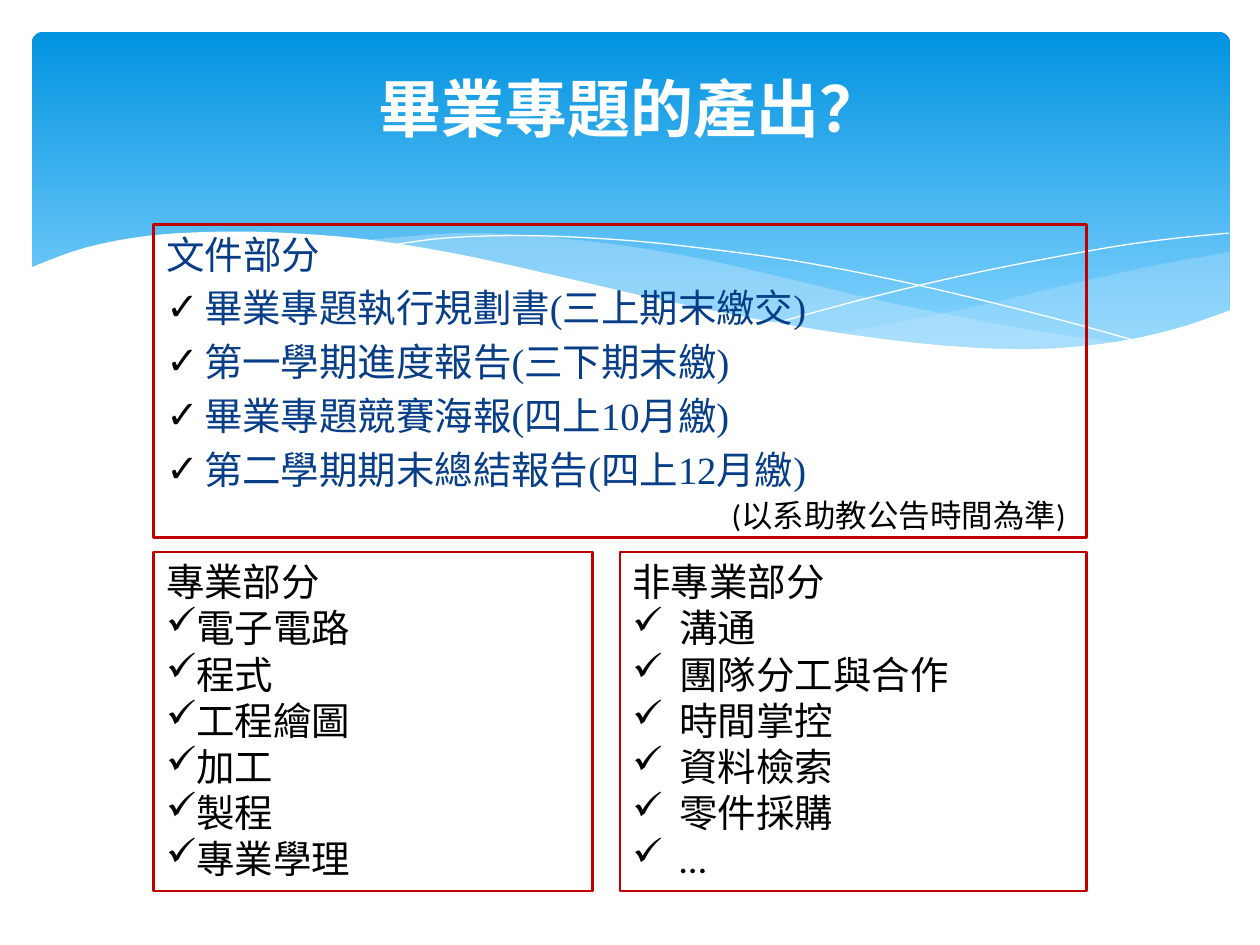
import pptx
import pptx.dml.color
import pptx.enum.dml
import pptx.enum.shapes
import pptx.enum.text
import pptx.oxml
import pptx.oxml.ns
import pptx.util
from pptx.util import Cm

COLORS = {
    "sky_top": "0293E0", "sky_bottom": "83D3FE", "pale_wave": "C6E7FC",
    "white": "FFFFFF", "black": "000000", "navy": "073E87", "red": "C00000",
}

TITLE = "畢業專題的產出？"
DOCUMENTS = ("文件部分", [
    "畢業專題執行規劃書(三上期末繳交)",
    "第一學期進度報告(三下期末繳)",
    "畢業專題競賽海報(四上10月繳)",
    "第二學期期末總結報告(四上12月繳)",
])
PROFESSIONAL = ("專業部分", ["電子電路", "程式", "工程繪圖", "加工", "製程", "專業學理"])
GENERAL = ("非專業部分", ["溝通", "團隊分工與合作", "時間掌控", "資料檢索", "零件採購", "…"])
NOTE = "(以系助教公告時間為準)"

# Boxes in cm: left, top, width, height
SKY_BOX = (0.64, 0.64, 24.16, 6.86)
TITLE_BOX = (0, 1.09, 25.4, 2.16)
DOCUMENTS_BOX = (3.1, 4.52, 18.8, 6.32)
PROFESSIONAL_BOX = (3.1, 11.13, 8.84, 6.83)
GENERAL_BOX = (12.5, 11.13, 9.4, 6.83)
NOTE_BOX = (14.5, 9.88, 7.8, 1.02)

# Waves in cm, each a list of smooth edges joined end to end
RIGHT_WAVE = [
    [(24.79, 5.08), (23.39, 5.33), (21.87, 5.66), (19.79, 6.15), (17.93, 6.53), (16.79, 6.73)],
    [(16.79, 6.73), (17.91, 6.88), (19.23, 7.01), (20.68, 7.06), (22.15, 6.96),
     (23.39, 6.73), (24.79, 6.27)],
]
MIDDLE_WAVE = [
    [(22.68, 6.93), (20.5, 6.6), (17.93, 6.1), (15.98, 5.64), (14.1, 5.21),
     (12.42, 4.93), (10.67, 4.75), (9.17, 4.7), (7.26, 4.85)],
    [(7.26, 4.85), (9.19, 5.16), (11.4, 5.64), (14.38, 6.3), (16.51, 6.71),
     (18.34, 6.96), (20.5, 7.06), (22.68, 6.93)],
]
FALLING_LINE = [[(7.85, 4.95), (8.97, 4.8), (10.57, 4.75), (12.42, 4.83), (14.12, 5),
                 (16.15, 5.28), (18.47, 5.74), (21.11, 6.38), (23.04, 6.91)]]
RISING_LINE = [[(15.57, 6.53), (17.65, 5.97), (19.71, 5.49), (22, 5.05),
                (23.47, 4.83), (24.77, 4.7)]]
WHITE_WAVE = [
    [(24.82, 6.25), (23.62, 6.65), (22.23, 6.93), (20.55, 7.04), (18.44, 6.91),
     (15.9, 6.55), (13.44, 6.07), (11.35, 5.59), (9.27, 5.13), (7.42, 4.83),
     (5.84, 4.7), (4.5, 4.67), (3.02, 4.75), (1.7, 5), (0.58, 5.41)],
    [(0.58, 8.36)],
    [(24.82, 8.36)],
]


def rgb(name):
    return pptx.dml.color.RGBColor.from_string(COLORS[name])


def add_xml(parent, tag, **attributes):
    element = pptx.oxml.parse_xml(f"<a:{tag} {pptx.oxml.ns.nsdecls('a')}/>")
    for key, value in attributes.items():
        element.set(key, str(value))
    parent.append(element)
    return element


def smooth_points(edge, steps=5):
    """Return points along a Catmull-Rom curve through the edge."""
    padded = [edge[0], *edge, edge[-1]]
    points = []
    for p0, p1, p2, p3 in zip(padded, padded[1:], padded[2:], padded[3:]):
        for step in range(steps):
            t = step / steps
            points.append(tuple(
                b + t * (c - a) / 2 + t ** 2 * (2 * a - 5 * b + 4 * c - d) / 2
                + t ** 3 * (3 * b - a - 3 * c + d) / 2
                for a, b, c, d in zip(p0, p1, p2, p3)))
    return points + [edge[-1]]


def add_wave(slide, edges, fill=None, opacity=100):
    """Add a filled wave, or a hairline when there is no fill."""
    points = [(Cm(x), Cm(y)) for edge in edges for x, y in smooth_points(edge)]
    builder = slide.shapes.build_freeform(*points[0])
    builder.add_line_segments(points[1:], close=fill is not None)
    wave = builder.convert_to_shape()
    wave.shadow.inherit = False
    if fill is None:
        wave.fill.background()
        wave.line.color.rgb = rgb("white")
        wave.line.width = 0
        return
    wave.line.fill.background()
    wave.fill.solid()
    wave.fill.fore_color.rgb = rgb(fill)
    if opacity < 100:
        color = wave.fill._xPr.find(".//" + pptx.oxml.ns.qn("a:srgbClr"))
        add_xml(color, "alpha", val=opacity * 1000)


def add_sky(slide):
    sky = slide.shapes.add_shape(
        pptx.enum.shapes.MSO_SHAPE.ROUNDED_RECTANGLE, *map(Cm, SKY_BOX))
    sky.adjustments[0] = 0.034
    sky.shadow.inherit = False
    sky.line.fill.background()
    sky.fill.gradient()
    sky.fill.gradient_angle = 270
    for stop, position, color in zip(sky.fill.gradient_stops, (0, 0.9), ("sky_top", "sky_bottom")):
        stop.position = position
        stop.color.rgb = rgb(color)


def place(shape, box):
    shape.left, shape.top, shape.width, shape.height = map(Cm, box)


def format_paragraph(paragraph, text, size, font, color, bold=False):
    paragraph.text = text
    paragraph.font.size = pptx.util.Pt(size)
    paragraph.font.name = font
    paragraph.font.bold = bold
    paragraph.font.color.rgb = rgb(color)


def fill_checklist(shape, content, font, color, indent):
    """Write a heading and ticked items into a red-framed shape."""
    shape.line.color.rgb = rgb("red")
    shape.line.width = pptx.util.Pt(1.5)
    frame = shape.text_frame
    frame.word_wrap = True
    frame.auto_size = pptx.enum.text.MSO_AUTO_SIZE.NONE
    heading, items = content
    for index, text in enumerate([heading, *items]):
        paragraph = frame.add_paragraph() if index else frame.paragraphs[0]
        properties = paragraph._p.get_or_add_pPr()
        hanging = Cm(indent) if index else 0
        properties.set("marL", str(hanging))
        properties.set("indent", str(-hanging))
        if index:
            tick_color = add_xml(properties, "buClr")
            add_xml(tick_color, "srgbClr", val=COLORS["black"])
            add_xml(properties, "buChar", char="✓")
        else:
            add_xml(properties, "buNone")
        format_paragraph(paragraph, text, 22, font, color)


def main():
    presentation = pptx.Presentation()
    presentation.slide_width, presentation.slide_height = Cm(25.4), Cm(19.05)
    slide = presentation.slides.add_slide(presentation.slide_layouts[1])
    title, body = slide.shapes.title, slide.placeholders[1]

    add_sky(slide)
    add_wave(slide, RIGHT_WAVE, "pale_wave", 29)
    add_wave(slide, MIDDLE_WAVE, "pale_wave", 40)
    add_wave(slide, FALLING_LINE)
    add_wave(slide, RISING_LINE)
    add_wave(slide, WHITE_WAVE, "white")

    # Bring the placeholders in front of the backdrop
    for placeholder, box in ((body, DOCUMENTS_BOX), (title, TITLE_BOX)):
        slide.shapes._spTree.append(placeholder._element)
        place(placeholder, box)

    fill_checklist(body, DOCUMENTS, "Times New Roman", "navy", 0.76)
    title.text_frame.vertical_anchor = pptx.enum.text.MSO_ANCHOR.MIDDLE
    heading = title.text_frame.paragraphs[0]
    heading.alignment = pptx.enum.text.PP_ALIGN.CENTER
    format_paragraph(heading, TITLE, 36, "Calibri", "white", bold=True)

    for box, content, indent in ((GENERAL_BOX, GENERAL, 0.95), (PROFESSIONAL_BOX, PROFESSIONAL, 0)):
        fill_checklist(slide.shapes.add_textbox(*map(Cm, box)), content, "Calibri", "black", indent)

    note = slide.shapes.add_textbox(*map(Cm, NOTE_BOX))
    note.text_frame.word_wrap = True
    format_paragraph(note.text_frame.paragraphs[0], NOTE, 18, "Calibri", "black")

    presentation.save("out.pptx")


if __name__ == "__main__":
    main()
